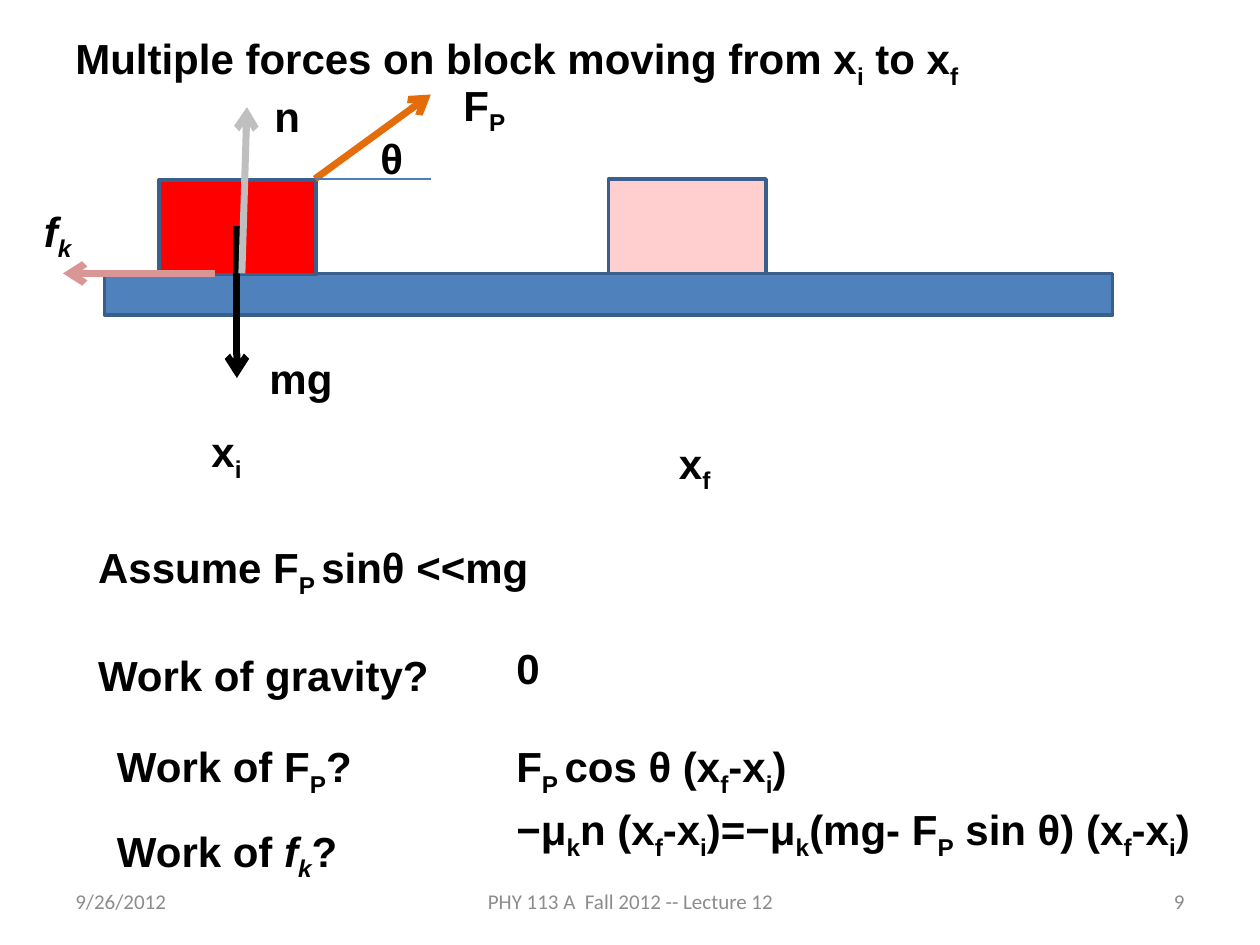
from dataclasses import dataclass

from lxml import etree
from pptx import Presentation
from pptx.dml.color import RGBColor
from pptx.enum.shapes import MSO_CONNECTOR, MSO_SHAPE
from pptx.enum.text import MSO_ANCHOR, PP_ALIGN
from pptx.oxml.ns import qn
from pptx.slide import Slide
from pptx.util import Inches, Pt

BLACK = RGBColor(0x00, 0x00, 0x00)
WHITE = RGBColor(0xFF, 0xFF, 0xFF)
FOOTER_GRAY = RGBColor(0x8C, 0x8C, 0x8C)
TABLE_BLUE = RGBColor(0x4F, 0x81, 0xBD)
EDGE_BLUE = RGBColor(0x3A, 0x5F, 0x8C)
ANGLE_BLUE = RGBColor(0x4B, 0x7E, 0xBC)
RED = RGBColor(0xFF, 0x00, 0x00)
ORANGE = RGBColor(0xE4, 0x6C, 0x0A)
NORMAL_GRAY = RGBColor(0xBF, 0xBF, 0xBF)
FRICTION_PINK = RGBColor(0xD9, 0x96, 0x94)


@dataclass(frozen=True)
class Label:
    """Text lines, where _x_ is a subscript and *x* is italic."""
    lines: tuple[str, ...]
    left: float
    top: float
    width: float
    height: float = 0.5
    line_gap: float = 0


@dataclass(frozen=True)
class Footer:
    text: str
    left: float
    width: float
    align: PP_ALIGN


@dataclass(frozen=True)
class Bar:
    left: float
    top: float
    width: float
    height: float
    color: RGBColor
    opacity: int = 100


@dataclass(frozen=True)
class Line:
    start: tuple[float, float]
    end: tuple[float, float]
    color: RGBColor
    weight: float = 4
    arrow: bool = True


BARS = [
    Bar(0.83, 2.17, 8, 0.33, TABLE_BLUE),
    Bar(1.26, 1.43, 1.25, 0.75, RED),
    Bar(4.83, 1.42, 1.25, 0.75, RED, opacity=19),
]

LINES = [
    Line((2.5, 1.42), (3.42, 0.75), ORANGE),
    Line((2.5, 1.42), (3.42, 1.42), ANGLE_BLUE, weight=0.75, arrow=False),
    Line((1.88, 1.79), (1.88, 3), BLACK),
    Line((1.92, 2.17), (1.96, 0.85), NORMAL_GRAY),
    Line((1.71, 2.17), (0.5, 2.17), FRICTION_PINK),
]

LABELS = [
    Label(("Multiple forces on block moving from x_i_ to x_f_",), 0.5, 0.21, 9.33),
    # Forces and positions
    Label(("F_P_",), 3.58, 0.58, 1),
    Label(("θ",), 2.92, 1, 1),
    Label(("mg",), 2.04, 2.75, 0.88),
    Label(("n",), 2.08, 0.67, 0.88),
    Label(("*f_k_*",), 0.25, 1.58, 0.88),
    Label(("x_i_",), 1.58, 3.33, 0.88),
    Label(("x_f_",), 5.29, 3.42, 0.88),
    # Questions and answers
    Label(("Assume F_P _sinθ <<mg", "Work of gravity?"), 0.68, 4.25, 8.31, 1.31, line_gap=29),
    Label(("0",), 4, 5.05, 0.83),
    Label(("Work of F_P_?",), 0.83, 5.83, 2.42),
    Label(("F_P _cos θ (x_f_-x_i_)",), 4, 5.83, 2.83),
    Label(("Work of *f_k_*?",), 0.83, 6.5, 2.42),
    Label(("−μ_k_n (x_f_-x_i_)=−μ_k_(mg- F_P_ sin θ) (x_f_-x_i_)",), 4, 6.33, 5.83),
]

FOOTERS = [
    Footer("9/26/2012", 0.5, 2.33, PP_ALIGN.LEFT),
    Footer("PHY 113 A  Fall 2012 -- Lecture 12", 3.42, 3.17, PP_ALIGN.CENTER),
    Footer("9", 7.17, 2.33, PP_ALIGN.RIGHT),
]


def add_bar(page: Slide, bar: Bar) -> None:
    shape = page.shapes.add_shape(
        MSO_SHAPE.RECTANGLE, Inches(bar.left), Inches(bar.top), Inches(bar.width), Inches(bar.height))
    shape.shadow.inherit = False
    shape.fill.solid()
    shape.fill.fore_color.rgb = bar.color
    if bar.opacity < 100:
        color = shape.fill._xPr.find(".//" + qn("a:srgbClr"))
        etree.SubElement(color, qn("a:alpha"), val=str(bar.opacity * 1000))
    shape.line.color.rgb = EDGE_BLUE
    shape.line.width = Pt(2)


def add_line(page: Slide, line: Line) -> None:
    connector = page.shapes.add_connector(
        MSO_CONNECTOR.STRAIGHT, *(Inches(value) for value in line.start + line.end))
    connector.line.color.rgb = line.color
    connector.line.width = Pt(line.weight)
    if line.arrow:
        etree.SubElement(connector.line._get_or_add_ln(), qn("a:tailEnd"), type="arrow")
    etree.SubElement(connector._element.spPr, qn("a:effectLst"))


def add_label(page: Slide, label: Label) -> None:
    box = page.shapes.add_textbox(
        Inches(label.left), Inches(label.top), Inches(label.width), Inches(label.height))
    frame = box.text_frame
    frame.word_wrap = True
    for index, line in enumerate(label.lines):
        para = frame.add_paragraph() if index else frame.paragraphs[0]
        if index:
            para.space_before = Pt(label.line_gap)
        # Every second piece of a split lies between two markers
        for style, piece in enumerate(line.split("*")):
            for level, text in enumerate(piece.split("_")):
                if not text:
                    continue
                span = para.add_run()
                span.text = text
                font = span.font
                font.name, font.size, font.bold = "Arial", Pt(24), True
                font.color.rgb = BLACK
                if style % 2:
                    font.italic = True
                if level % 2:
                    font._element.set("baseline", "-25000")


def add_footer(page: Slide, footer: Footer) -> None:
    box = page.shapes.add_textbox(Inches(footer.left), Inches(6.95), Inches(footer.width), Inches(0.4))
    frame = box.text_frame
    frame.word_wrap = True
    frame.vertical_anchor = MSO_ANCHOR.MIDDLE
    frame.text = footer.text
    para = frame.paragraphs[0]
    para.alignment = footer.align
    font = para.runs[0].font
    font.name, font.size = "Calibri", Pt(12)
    font.color.rgb = FOOTER_GRAY


def main() -> None:
    deck = Presentation()
    deck.slide_width, deck.slide_height = Inches(10), Inches(7.5)
    page = deck.slides.add_slide(deck.slide_layouts[6])
    page.background.fill.solid()
    page.background.fill.fore_color.rgb = WHITE

    for footer in FOOTERS:
        add_footer(page, footer)
    for bar in BARS:
        add_bar(page, bar)
    for line in LINES:
        add_line(page, line)
    for label in LABELS:
        add_label(page, label)

    deck.save("out.pptx")


if __name__ == "__main__":
    main()
